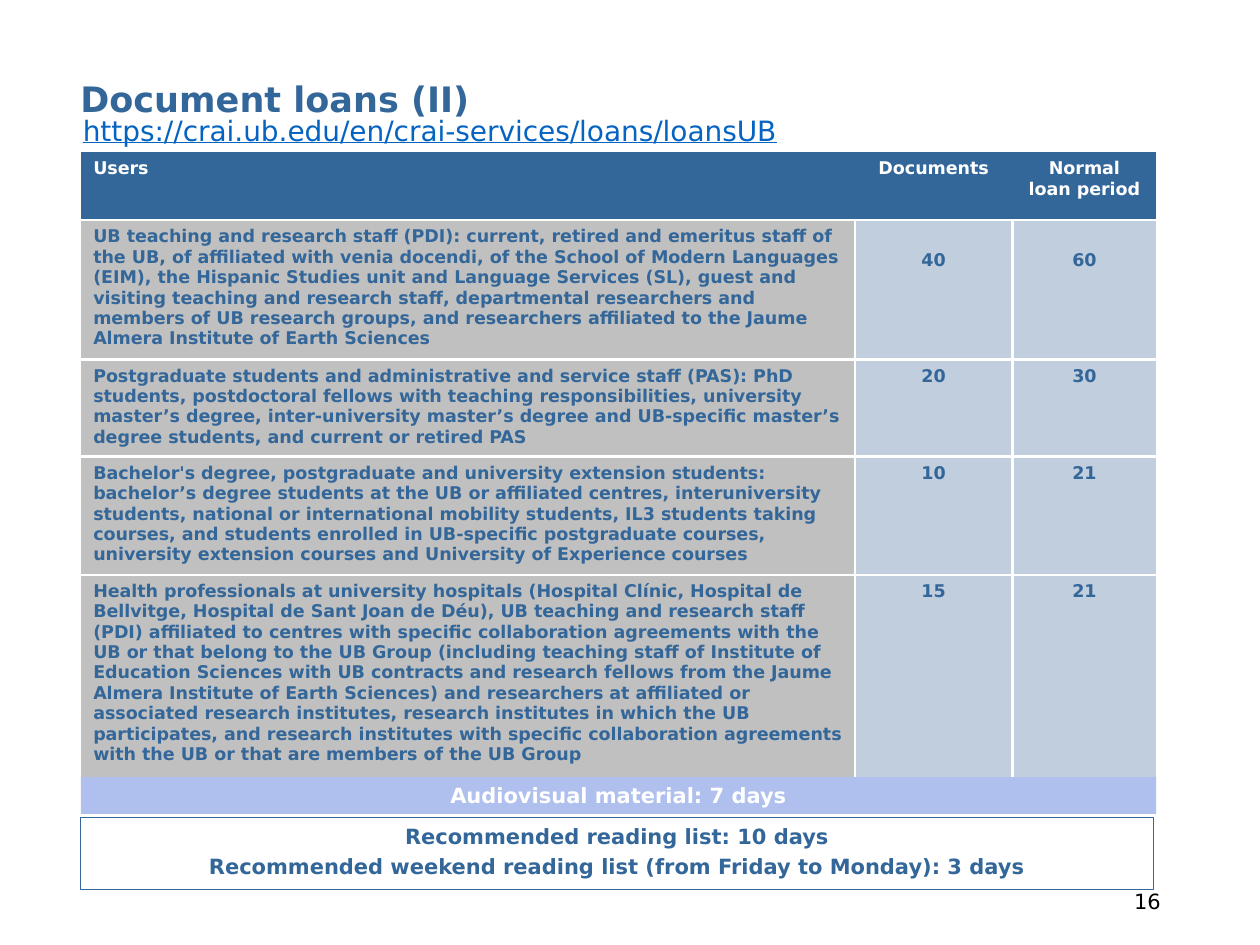
from pptx import Presentation
from pptx.dml.color import RGBColor as RGB
from pptx.enum.shapes import MSO_SHAPE as Shape
from pptx.enum.text import MSO_ANCHOR as Anchor, PP_ALIGN as Align
from pptx.oxml import parse_xml
from pptx.oxml.ns import nsdecls, qn
from pptx.util import Cm, Pt

FONT = "DejaVu Sans"
BLUE = RGB(0x33, 0x66, 0x99)
LINK = RGB(0x05, 0x63, 0xC1)
GREY = RGB(0xC0, 0xC0, 0xC0)
PALE = RGB(0xC1, 0xCE, 0xDD)
LILAC = RGB(0xB0, 0xC0, 0xEE)
WHITE = RGB(0xFF, 0xFF, 0xFF)
BLACK = RGB(0, 0, 0)
PLAIN = "{2D5ABB26-0587-4C30-8999-92F81FD0307C}"
LEFT = 1.63
COLS = [15.6, 3.18, 2.9]
ROWS = [1.37, 2.79, 1.96, 2.34, 4.06]
LOANS = [
    ("Users", "Documents", "Normal loan period"),
    ("UB teaching and research staff (PDI): current, retired and emeritus "
     "staff of the UB, of affiliated with venia docendi, of the School of "
     "Modern Languages (EIM), the Hispanic Studies unit and Language Services "
     "(SL), guest and visiting teaching and research staff, departmental "
     "researchers and members of UB research groups, and researchers "
     "affiliated to the Jaume Almera Institute of Earth Sciences", "40", "60"),
    ("Postgraduate students and administrative and service staff (PAS): PhD "
     "students, postdoctoral fellows with teaching responsibilities, "
     "university master’s degree, inter-university master’s degree and "
     "UB-specific master’s degree students, and current or retired PAS",
     "20", "30"),
    ("Bachelor's degree, postgraduate and university extension students: "
     "bachelor’s degree students at the UB or affiliated centres, "
     "interuniversity students, national or international mobility students, "
     "IL3 students taking courses, and students enrolled in UB-specific "
     "postgraduate courses, university extension courses and University of "
     "Experience courses", "10", "21"),
    ("Health professionals at university hospitals (Hospital Clínic, Hospital "
     "de Bellvitge, Hospital de Sant Joan de Déu), UB teaching and research "
     "staff (PDI) affiliated to centres with specific collaboration "
     "agreements with the UB or that belong to the UB Group (including "
     "teaching staff of Institute of Education Sciences with UB contracts and "
     "research fellows from the Jaume Almera Institute of Earth Sciences) and "
     "researchers at affiliated or associated research institutes, research "
     "institutes in which the UB participates, and research institutes with "
     "specific collaboration agreements with the UB or that are members of "
     "the UB Group", "15", "21"),
]


def write(frame, *lines, size=12, color=BLUE, bold=True, line=False,
          align=Align.LEFT, pitch=None, gap=2.8):
    for i, text in enumerate(lines):
        para = frame.paragraphs[0] if i == 0 else frame.add_paragraph()
        para.alignment = align
        para.line_spacing = pitch
        if i:
            para.space_before = Pt(gap)
        run = para.add_run()
        run.text = text
        font = run.font
        font.name, font.size = FONT, Pt(size)
        font.bold, font.underline = bold, line
        font.color.rgb = color


def label(slide, box, text, wrap=True, anchor=Anchor.MIDDLE, **style):
    frame = slide.shapes.add_textbox(*map(Cm, box)).text_frame
    frame.word_wrap = wrap
    frame.vertical_anchor = anchor
    write(frame, text, **style)


def bar(slide, box, *lines, fill=None, edge=None, **style):
    shape = slide.shapes.add_shape(Shape.RECTANGLE, *map(Cm, box))
    shape.shadow.inherit = False
    if fill:
        shape.fill.solid()
        shape.fill.fore_color.rgb = fill
    else:
        shape.fill.background()
    if edge:
        shape.line.color.rgb = edge
        shape.line.width = Pt(0.75)
    else:
        shape.line.fill.background()
    shape.text_frame.word_wrap = True
    shape.text_frame.vertical_anchor = Anchor.TOP
    write(shape.text_frame, *lines, align=Align.CENTER, **style)


def rule(cell, sides):
    props = cell._tc.get_or_add_tcPr()
    for side in sides:
        props.append(parse_xml(
            f'<a:ln{side} {nsdecls("a")} w="{Pt(1.5)}"><a:solidFill>'
            f'<a:srgbClr val="{WHITE}"/></a:solidFill></a:ln{side}>'))


def grid(slide, top):
    table = slide.shapes.add_table(
        len(ROWS), len(COLS), Cm(LEFT), Cm(top),
        Cm(sum(COLS)), Cm(sum(ROWS))).table
    table._tbl.tblPr.find(qn("a:tableStyleId")).text = PLAIN
    table.first_row = table.horz_banding = False
    for col, width in zip(table.columns, COLS):
        col.width = Cm(width)
    for r, (row, high) in enumerate(zip(LOANS, ROWS)):
        table.rows[r].height = Cm(high)
        for c, text in enumerate(row):
            cell = table.cell(r, c)
            sides = {"L": r and c, "R": r and c < len(COLS) - 1,
                     "T": r, "B": r < len(ROWS) - 1}
            rule(cell, [side for side, on in sides.items() if on])
            cell.fill.solid()
            cell.fill.fore_color.rgb = (
                BLUE if r == 0 else PALE if c else GREY)
            cell.margin_left = cell.margin_right = Cm(0.25)
            cell.margin_top = Cm(0.6 if r == 1 and c else 0.13)
            cell.margin_bottom = Cm(0.13)
            write(cell.text_frame, text, size=10,
                  color=BLUE if r else WHITE,
                  align=Align.CENTER if c else Align.LEFT)


def main():
    deck = Presentation()
    deck.slide_width, deck.slide_height = Cm(25.4), Cm(19.05)
    slide = deck.slides.add_slide(deck.slide_layouts[6])
    label(slide, (17.93, 17.65, 5.72, 1.02), "16", color=BLACK, bold=False,
          align=Align.RIGHT)
    bar(slide, (LEFT, 16.48, 21.62, 1.45), "Recommended reading list: 10 days",
        "Recommended weekend reading list (from Friday to Monday): 3 days",
        edge=BLUE)
    bar(slide, (LEFT, 15.65, 21.68, 0.76), "Audiovisual material: 7 days",
        fill=LILAC, color=WHITE)
    grid(slide, 3.07)
    label(slide, (1.37, 1.52, 22.86, 1.02), "Document loans (II)", size=20,
          pitch=0.9)
    label(slide, (1.42, 2.16, 15.11, 1.63),
          "https://crai.ub.edu/en/crai-services/loans/loansUB", wrap=False,
          anchor=Anchor.TOP, size=16, color=LINK, bold=False, line=True)
    deck.save("out.pptx")


if __name__ == "__main__":
    main()
